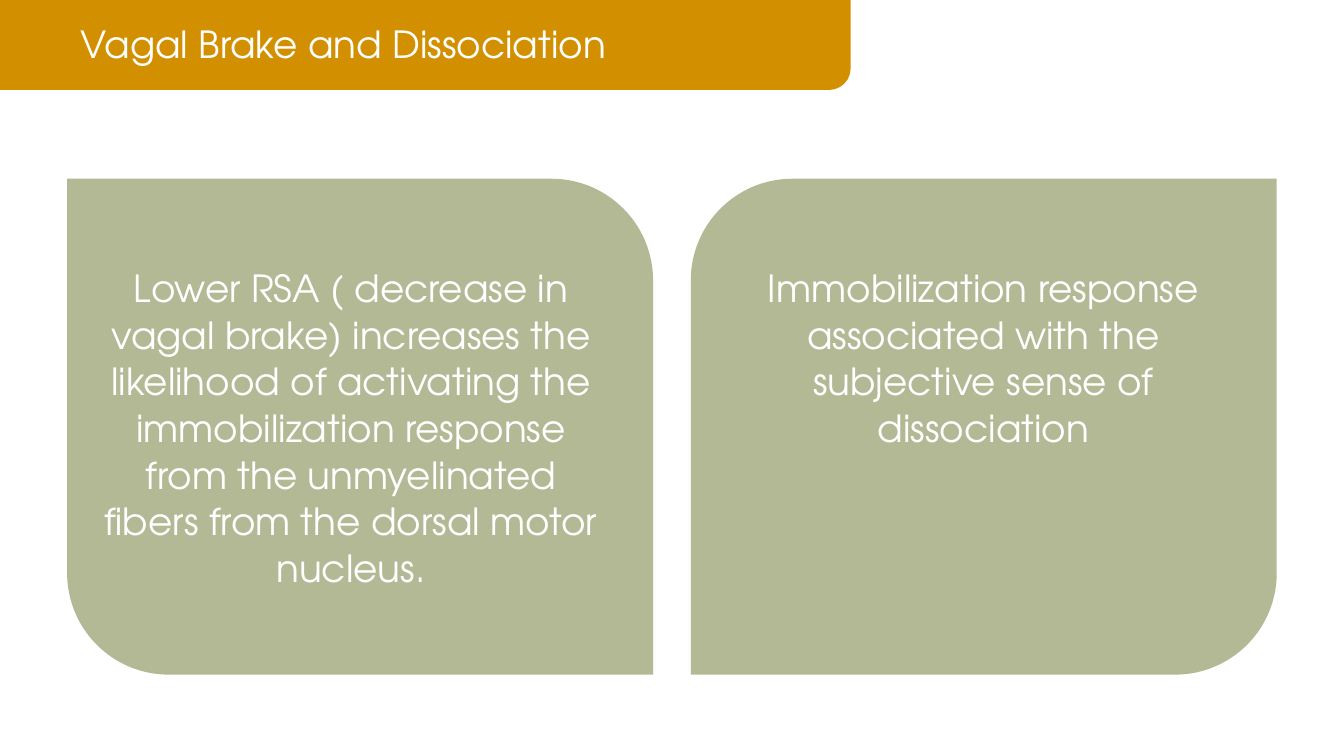
from pptx import Presentation
from pptx.dml.color import RGBColor
from pptx.enum.shapes import MSO_SHAPE as Shape
from pptx.enum.text import MSO_ANCHOR as Anchor, PP_ALIGN as Align
from pptx.util import Inches, Pt

AMBER = RGBColor(0xD2, 0x90, 0x01)
SAGE = RGBColor(0xB3, 0xB9, 0x95)
WHITE = RGBColor(0xFF, 0xFF, 0xFF)
FONT = "TeX Gyre Adventor"
WIDTH = 10
HEIGHT = WIDTH * 9 / 16
MARGIN, GUTTER = 0.5, 0.28
PANEL_WIDTH = (WIDTH - 2 * MARGIN - GUTTER) / 2
PANEL_TOP, PANEL_HEIGHT = 1.33, 3.69

STATEMENTS = [
    ("Lower RSA ( decrease in vagal brake) increases the likelihood of "
     "activating the immobilization response from the unmyelinated fibers "
     "from the dorsal motor nucleus.", 0.9, True),
    ("Immobilization response associated with the subjective sense of "
     "dissociation", 0.93, False),
]


def add_block(slide, kind, box, color, flip=None):
    """Add a plain filled shape, optionally mirrored by flipH or flipV."""
    block = slide.shapes.add_shape(kind, *map(Inches, box))
    block.shadow.inherit = False
    block.fill.solid()
    block.fill.fore_color.rgb = color
    block.line.fill.background()
    if flip:
        block.element.spPr.xfrm.set(flip, "1")
    return block


def write(frame, words, align):
    """Write one white run into a text frame and return its paragraph."""
    frame.word_wrap = True
    paragraph = frame.paragraphs[0]
    paragraph.alignment = align
    paragraph.space_before = Pt(0)
    run = paragraph.add_run()
    run.text = words
    run.font.name = FONT
    run.font.size = Pt(20)
    run.font.color.rgb = WHITE
    return paragraph


def add_banner(slide, box, words):
    """Place the heading on a band with one rounded corner."""
    left, top, width, height = box
    band = add_block(slide, Shape.ROUND_1_RECTANGLE, box, AMBER, "flipV")
    band.adjustments[0] = 0.24
    heading = slide.shapes.title
    heading.left, heading.top = Inches(left + MARGIN), Inches(top)
    heading.width, heading.height = Inches(WIDTH * 0.625), Inches(height * 0.81)
    heading.text_frame.vertical_anchor = Anchor.BOTTOM
    write(heading.text_frame, words, Align.LEFT)
    heading.element.addprevious(band.element)


def add_panel(slide, box, words, text_share, mirrored):
    """Place a statement on a panel with two opposite corners rounded."""
    left, top, width, height = box
    panel = add_block(slide, Shape.ROUND_2_DIAG_RECTANGLE, box, SAGE,
                      "flipH" if mirrored else None)
    panel.adjustments[0], panel.adjustments[1] = 0.205, 0
    inset = 0.58
    statement = slide.shapes.add_textbox(
        Inches(left + 0.15), Inches(top + inset),
        Inches(width * text_share), Inches(height - inset))
    paragraph = write(statement.text_frame, words, Align.CENTER)
    paragraph.line_spacing = Pt(25)


def main():
    """Build and save the slide."""
    deck = Presentation()
    deck.slide_width, deck.slide_height = Inches(WIDTH), Inches(HEIGHT)
    slide = deck.slides.add_slide(deck.slide_layouts[5])
    add_banner(slide, (0, 0, 6.33, 0.67), "Vagal Brake and Dissociation")
    for column, (words, text_share, mirrored) in enumerate(STATEMENTS):
        left = MARGIN + column * (PANEL_WIDTH + GUTTER)
        add_panel(slide, (left, PANEL_TOP, PANEL_WIDTH, PANEL_HEIGHT),
                  words, text_share, mirrored)
    deck.save("out.pptx")


if __name__ == "__main__":
    main()
